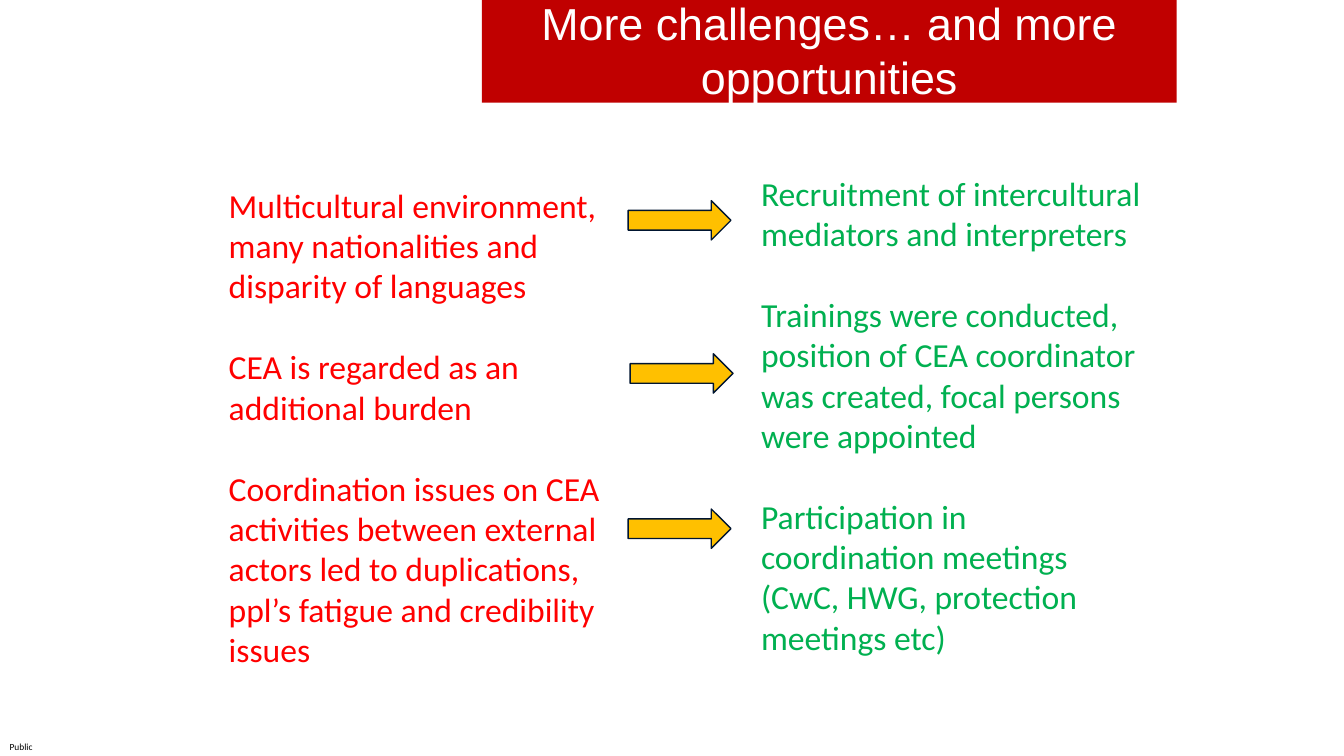
from pptx import Presentation
from pptx import util as u
from pptx.dml.color import RGBColor
from pptx.enum import shapes, text

# Content
TITLE = "More challenges… and more opportunities"
LABEL = "Public"
CHALLENGES = [
    "Multicultural environment, many nationalities and disparity of languages",
    "CEA is regarded as an additional burden",
    "Coordination issues on CEA activities between external actors led to "
    "duplications, ppl’s fatigue and credibility issues",
]
OPPORTUNITIES = [
    "Recruitment of intercultural mediators and interpreters",
    "Trainings were conducted, position of CEA coordinator was created, "
    "focal persons were appointed",
    "Participation in coordination meetings (CwC, HWG, protection meetings etc)",
]

# Layout in inches: left, top, width, height
WIDTH, HEIGHT = 13.33, 7.5
BANNER = (4.78, -0.04, 6.89, 1.06)
COLUMNS = [
    (CHALLENGES, (2.17, 2.5, 3.89, 3.13), "FF0000"),
    (OPPORTUNITIES, (7.45, 2.38, 4.02, 3.13), "00B050"),
]
ARROW_SIZE = (1.02, 0.39)
ARROWS = [(6.23, 1.99), (6.25, 3.51), (6.23, 5.05)]
LABEL_SIZE = (0.42, 0.11)
ITEM_GAP = 29  # one line of body text, in points
TOP_INSET = 0.39  # lowers the centred columns below the banner

deck = Presentation()
deck.slide_width, deck.slide_height = u.Inches(WIDTH), u.Inches(HEIGHT)
slide = deck.slides.add_slide(deck.slide_layouts[6])


def colour(value):
    return RGBColor.from_string(value)


def inches(box):
    return [u.Inches(length) for length in box]


def write(frame, items, size, font, ink, align=text.PP_ALIGN.LEFT, gap=0):
    frame.vertical_anchor = text.MSO_ANCHOR.MIDDLE
    for i, item in enumerate(items):
        paragraph = frame.add_paragraph() if i else frame.paragraphs[0]
        paragraph.alignment = align
        if i and gap:
            paragraph.space_before = u.Pt(gap)
        run = paragraph.add_run()
        run.text = item
        run.font.size, run.font.name = u.Pt(size), font
        run.font.color.rgb = colour(ink)


def add_filled(kind, box, fill):
    shape = slide.shapes.add_shape(kind, *inches(box))
    shape.shadow.inherit = False
    shape.fill.solid()
    shape.fill.fore_color.rgb = colour(fill)
    shape.line.fill.background()
    return shape


# Classification label in the bottom left corner
label = slide.shapes.add_textbox(*inches((0, HEIGHT - 0.15, *LABEL_SIZE))).text_frame
label.margin_left = label.margin_right = label.margin_top = label.margin_bottom = 0
label.word_wrap = False
write(label, [LABEL], 6.7, "Calibri", "000000", text.PP_ALIGN.CENTER)

# Title banner
banner = add_filled(shapes.MSO_SHAPE.RECTANGLE, BANNER, "C00000")
banner.text_frame.word_wrap = True
write(banner.text_frame, [TITLE], 32, "Arial", "FFFFFF", text.PP_ALIGN.CENTER)

# Challenges on the left, opportunities on the right
for items, box, ink in COLUMNS:
    column = slide.shapes.add_textbox(*inches(box)).text_frame
    column.word_wrap = True
    column.margin_top = u.Inches(TOP_INSET)
    write(column, items, 24, "Calibri", ink, gap=ITEM_GAP)

# Arrows from each challenge to its opportunity
for corner in ARROWS:
    arrow = add_filled(shapes.MSO_SHAPE.RIGHT_ARROW, corner + ARROW_SIZE, "FFC000")
    arrow.line.color.rgb = colour("001530")
    arrow.line.width = u.Pt(1)

deck.save("out.pptx")
